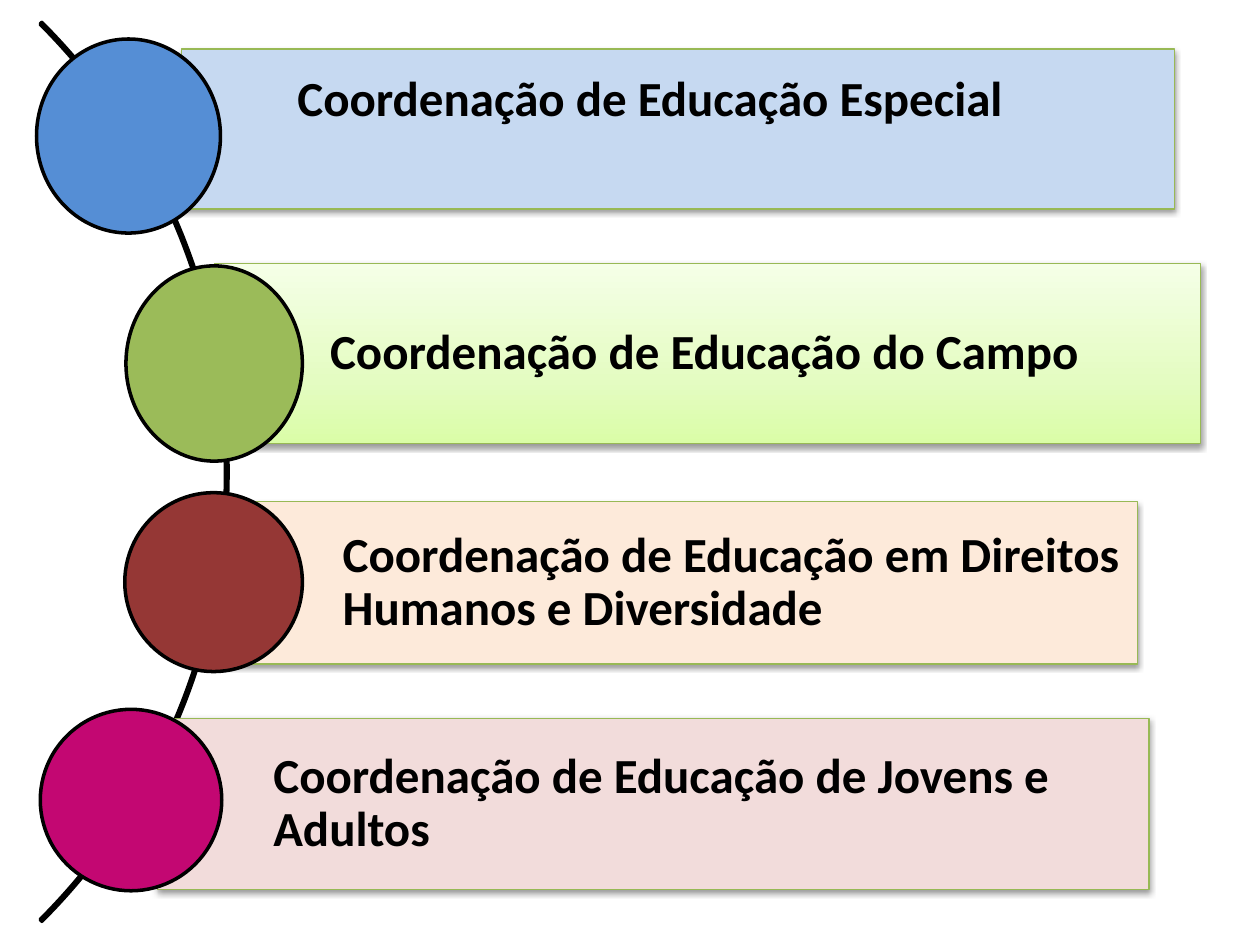
from pptx import Presentation, util as u
from pptx.dml.color import RGBColor
from pptx.enum import shapes, text
from pptx.oxml import parse_xml
from pptx.oxml.ns import nsdecls

COLORS = {
    "black": "000000", "edge": "98B955",
    "blue": "558ED5", "pale_blue": "C6D9F1",
    "green": "9BBB59",
    "brown": "953735", "pale_orange": "FDEADA",
    "magenta": "C30772", "pale_rose": "F2DCDB",
}
GREEN_STOPS = [(0, "DAFDA7"), (35, "E4FCC2"), (100, "F5FFE7")]


class Diagram:
    """Holds the presentation, its current slide and the shared style."""
    font, size = "Calibri", 28
    indent, inset = 0.92, 0.08

    def __init__(self):
        self.prs = Presentation()
        self.prs.slide_width, self.prs.slide_height = u.Inches(10), u.Inches(7.5)
        self.s = self.prs.slides.add_slide(self.prs.slide_layouts[6])

    def color(self, name):
        return RGBColor.from_string(COLORS[name])

    def shape(self, kind, box, fill, line, width):
        sp = self.s.shapes.add_shape(kind, *map(u.Inches, box))
        sp.shadow.inherit = False
        sp.line.color.rgb = self.color(line)
        sp.line.width = u.Pt(width)
        if fill is None:
            sp.fill.background()
        elif isinstance(fill, list):
            self.gradient(sp, fill)
        else:
            sp.fill.solid()
            sp.fill.fore_color.rgb = self.color(fill)
        return sp

    def gradient(self, sp, stops):
        """Fill from bottom to top with (percent, hex) stops."""
        sp.fill.background()
        gs = "".join(f'<a:gs pos="{pos * 1000}"><a:srgbClr val="{c}"/></a:gs>'
                     for pos, c in stops)
        spPr = sp._element.spPr
        spPr.replace(spPr.find("{*}noFill"), parse_xml(
            f'<a:gradFill {nsdecls("a")} rotWithShape="1"><a:gsLst>{gs}</a:gsLst>'
            '<a:lin ang="16200000" scaled="0"/></a:gradFill>'))

    def drop_shadow(self, sp):
        sp._element.spPr.find("{*}effectLst").append(parse_xml(
            f'<a:outerShdw {nsdecls("a")} blurRad="{u.Pt(3.1)}" dist="{u.Pt(1.6)}" '
            'dir="5400000" rotWithShape="0"><a:srgbClr val="000000">'
            '<a:alpha val="38000"/></a:srgbClr></a:outerShdw>'))

    def arc(self, box):
        sp = self.shape(shapes.MSO_SHAPE.BLOCK_ARC, box, None, "black", 2)
        for i, value in enumerate((189, 27, 0.002)):
            sp.adjustments[i] = value

    def bar(self, box, fill, label, top=None):
        """Labelled bar; top places the label from the upper edge, else centred."""
        sp = self.shape(shapes.MSO_SHAPE.RECTANGLE, box, fill, "edge", 0.75)
        self.drop_shadow(sp)
        tf = sp.text_frame
        tf.word_wrap = True
        tf.margin_left = u.Inches(self.indent)
        tf.margin_right = tf.margin_bottom = u.Inches(self.inset)
        tf.margin_top = u.Inches(top or self.inset)
        tf.vertical_anchor = text.MSO_ANCHOR.TOP if top else text.MSO_ANCHOR.MIDDLE
        tf.text = label
        p = tf.paragraphs[0]
        p.alignment = text.PP_ALIGN.LEFT
        p.line_spacing = 0.9
        r = p.runs[0]
        r.font.name, r.font.size, r.font.bold = self.font, u.Pt(self.size), True
        r.font.color.rgb = self.color("black")

    def circle(self, box, fill):
        self.shape(shapes.MSO_SHAPE.OVAL, box, fill, "black", 2)


def main():
    d = Diagram()
    d.arc((-8.28, -1.3, 10.09, 10.09))
    rows = [
        ("Coordenação de Educação Especial", (1.44, 0.39, 7.88, 1.27), "pale_blue",
         0.2, (0.29, 0.31, 1.46, 1.54), "blue"),
        ("Coordenação de Educação do Campo", (1.7, 2.09, 7.83, 1.43), GREEN_STOPS,
         None, (1, 2.11, 1.4, 1.55), "green"),
        ("Coordenação de Educação em Direitos Humanos e Diversidade",
         (1.8, 3.98, 7.23, 1.29), "pale_orange",
         None, (0.99, 3.91, 1.41, 1.42), "brown"),
        ("Coordenação de Educação de Jovens e Adultos", (1.25, 5.7, 7.87, 1.36),
         "pale_rose", None, (0.32, 5.63, 1.44, 1.44), "magenta"),
    ]
    for label, bar_box, bar_fill, top, circle_box, circle_fill in rows:
        d.bar(bar_box, bar_fill, label, top)
        d.circle(circle_box, circle_fill)
    d.prs.save("out.pptx")


if __name__ == "__main__":
    main()
